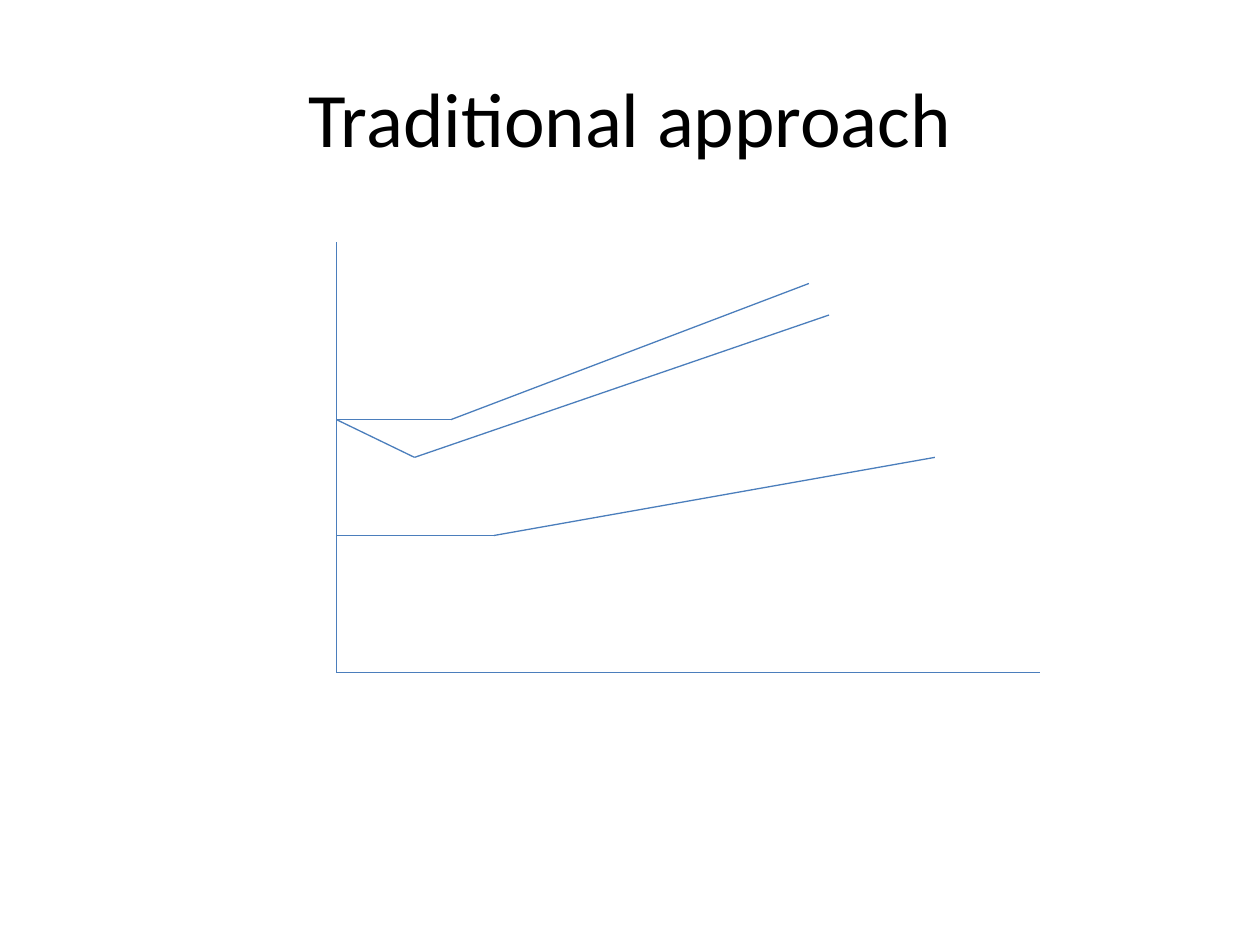
from itertools import pairwise

from pptx import Presentation
from pptx.dml.color import RGBColor
from pptx.enum.shapes import MSO_CONNECTOR as Connector
from pptx.enum.text import MSO_ANCHOR as Anchor, PP_ALIGN as Align
from pptx.oxml.ns import qn
from pptx.util import Inches, Pt

COLORS = {"text": "000000", "line": "4B7EBC"}
TITLE_ONLY = 5

AXIS_X = 2.67
BASE_Y = 5.34
START_Y = 3.33
AXES = [(8.25, BASE_Y), (AXIS_X, BASE_Y), (AXIS_X, 1.92)]
LOWER_TREND = [(AXIS_X, 4.25), (3.92, 4.25), (7.42, 3.63)]
FLAT_THEN_RISE = [(AXIS_X, START_Y), (3.58, START_Y), (6.42, 2.25)]
DIP_THEN_RISE = [(AXIS_X, START_Y), (3.29, 3.63), (6.58, 2.5)]


def write_text(frame, text, *, size, color, font="Calibri",
               align=Align.CENTER, anchor=Anchor.MIDDLE):
    frame.word_wrap = True
    frame.vertical_anchor = anchor
    paragraph = frame.paragraphs[0]
    paragraph.alignment = align
    run = paragraph.add_run()
    run.text = text
    run.font.name = font
    run.font.size = Pt(size)
    run.font.color.rgb = RGBColor.from_string(COLORS[color])


def add_title(slide, text):
    title = slide.shapes.title
    title.left, title.top = Inches(0.5), Inches(0.3)
    title.width, title.height = Inches(9), Inches(1.25)
    write_text(title.text_frame, text, size=44, color="text")


def add_path(slide, points):
    """Join consecutive points with straight connectors."""
    for start, end in pairwise(points):
        segment = slide.shapes.add_connector(
            Connector.STRAIGHT, *map(Inches, start + end))
        segment.line.color.rgb = RGBColor.from_string(COLORS["line"])
        segment.line.width = Pt(0.75)
        properties = segment._element.spPr
        properties.append(properties.makeelement(qn("a:effectLst"), {}))


def main():
    deck = Presentation()
    deck.slide_width, deck.slide_height = Inches(10), Inches(7.5)
    slide = deck.slides.add_slide(deck.slide_layouts[TITLE_ONLY])
    add_title(slide, "Traditional approach")
    for points in (AXES, LOWER_TREND, FLAT_THEN_RISE, DIP_THEN_RISE):
        add_path(slide, points)
    deck.save("out.pptx")


if __name__ == "__main__":
    main()
